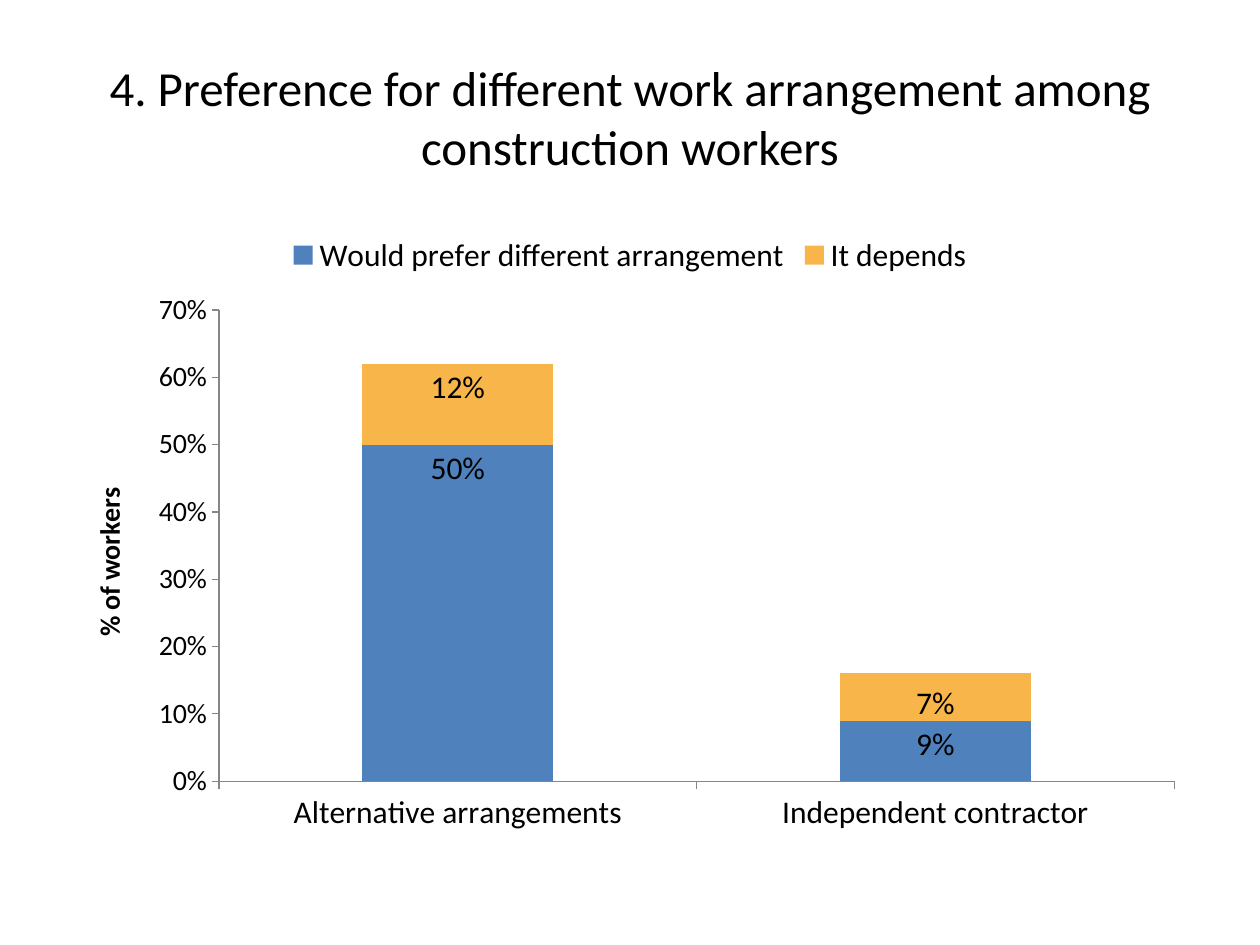
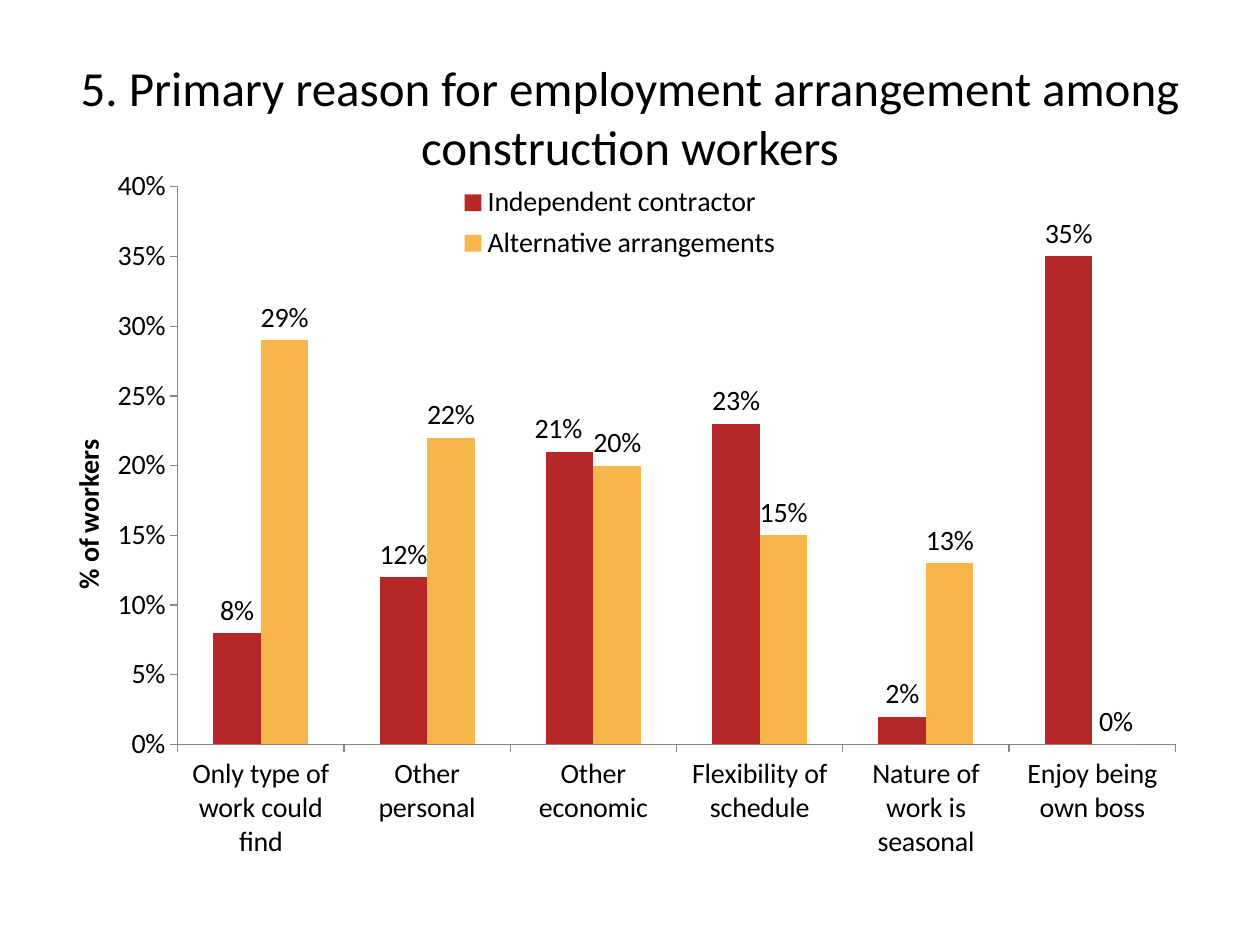
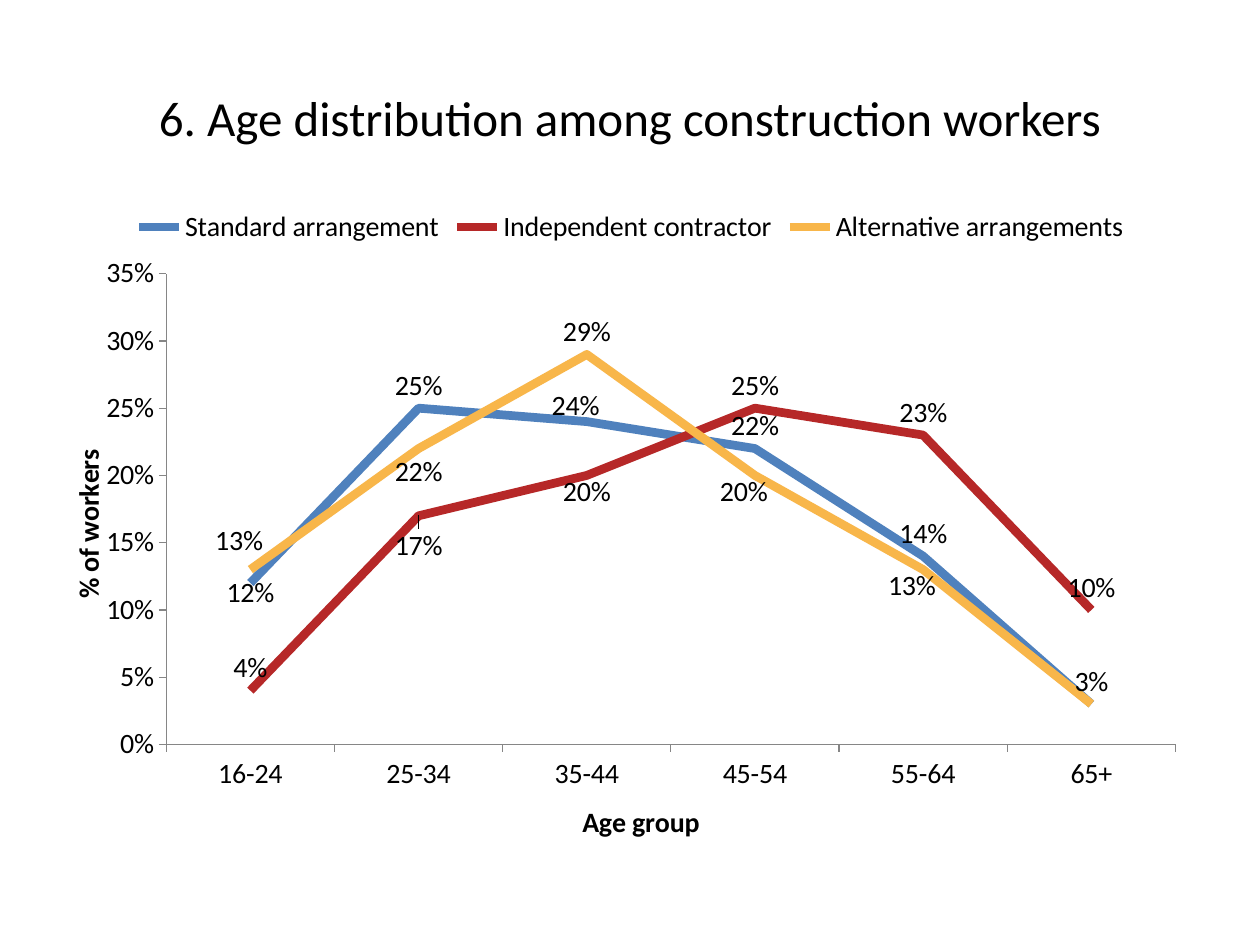
from dataclasses import dataclass
from lxml.etree import SubElement
from pptx import Presentation
from pptx.chart.data import CategoryChartData
from pptx.dml.color import RGBColor
from pptx.enum.chart import (XL_CHART_TYPE, XL_LABEL_POSITION, XL_LEGEND_POSITION,
                             XL_TICK_MARK)
from pptx.enum.text import MSO_ANCHOR, PP_ALIGN
from pptx.oxml.ns import qn
from pptx.util import Inches, Pt


@dataclass(frozen=True)
class Theme:
    font: str = "Calibri"
    text: str = "000000"
    axis: str = "868686"
    blue: str = "4F81BD"
    red: str = "B62828"
    amber: str = "F8B64A"
    title_size: int = 28
    chart_size: int = 16
    large_size: int = 18
    axis_line: float = 0.75
    trend_line: float = 5


T = Theme()
INDEPENDENT, ALTERNATIVE = "Independent contractor", "Alternative arrangements"
WORKERS = "% of workers"

# Content: series are (name, colour, values, {point: label shift, or None for no label})
SLIDES = [
    dict(title="4. Preference for different work arrangement among construction workers",
         kind=XL_CHART_TYPE.COLUMN_STACKED, box=(0.5, 1.75, 9, 4.95), size=T.large_size,
         fmt="0%", top=0.7, step=0.1, labels=XL_LABEL_POSITION.INSIDE_END, overlap=100,
         categories=[ALTERNATIVE, INDEPENDENT],
         series=[("Would prefer different arrangement", T.blue, [0.5, 0.09], {}),
                 ("It depends", T.amber, [0.12, 0.07], {1: (0, 0.01)})]),
    dict(title="5. Primary reason for employment arrangement among construction workers",
         kind=XL_CHART_TYPE.COLUMN_CLUSTERED, box=(0.51, 1.31, 9, 5.75), size=T.chart_size,
         fmt="0%", top=0.4, step=0.05, labels=XL_LABEL_POSITION.OUTSIDE_END, overlap=0,
         plot=(0.1, 0.03, 0.88, 0.77), legend=(0.34, 0.02, 0.3, 0.12),
         categories=["Only type of work could find", "Other personal", "Other economic",
                     "Flexibility of schedule", "Nature of work is seasonal",
                     "Enjoy being own boss"],
         series=[(INDEPENDENT, T.red, [0.08, 0.12, 0.21, 0.23, 0.02, 0.35],
                  {2: (-0.01, 0)}),
                 (ALTERNATIVE, T.amber, [0.29, 0.22, 0.2, 0.15, 0.13, 0], {})]),
    dict(title="6. Age distribution among construction workers",
         kind=XL_CHART_TYPE.LINE, box=(0.51, 1.55, 9, 5.19), size=T.chart_size,
         fmt='#,##0"%"', top=35, step=5, labels=XL_LABEL_POSITION.ABOVE,
         plot=(0.09, 0.12, 0.89, 0.72), category_title="Age group",
         categories=["16-24", "25-34", "35-44", "45-54", "55-64", "65+"],
         series=[("Standard arrangement", T.blue, [12, 25, 24, 22, 14, 3],
                  {0: (0, 0.05), 2: (-0.01, 0.01)}),
                 (INDEPENDENT, T.red, [4, 17, 20, 25, 23, 10],
                  {1: (0, 0.08), 2: (0, 0.06)}),
                 (ALTERNATIVE, T.amber, [13, 22, 29, 20, 13, 3],
                  {0: (-0.01, -0.01), 1: (0, 0.07), 3: (-0.01, 0.06),
                   4: (-0.01, 0.06), 5: None})]),
]


# Text
def style(font, size, bold=False):
    font.name, font.size, font.bold = T.font, Pt(size), bold
    font.color.rgb = RGBColor.from_string(T.text)


def add_text(s, text, box, size, align=PP_ALIGN.CENTER, anchor=MSO_ANCHOR.MIDDLE):
    tf = s.shapes.add_textbox(*map(Inches, box)).text_frame
    tf.word_wrap, tf.vertical_anchor = True, anchor
    p = tf.paragraphs[0]
    p.alignment = align
    r = p.add_run()
    r.text = text
    style(r.font, size)


# Chart parts
def set_layout(parent, index, values, inner=False, edge=True):
    """Place a chart part by fractions of the chart's width and height."""
    for old in parent.findall(qn("c:layout")):
        parent.remove(old)
    layout = SubElement(parent, qn("c:layout"))
    parent.insert(index, layout)
    manual = SubElement(layout, qn("c:manualLayout"))
    items = [("layoutTarget", "inner")] if inner else []
    items += [("xMode", "edge"), ("yMode", "edge")] if edge else []
    for tag, value in items + list(zip("xywh", values)):
        SubElement(manual, qn("c:" + tag)).set("val", str(value))


def format_axis(axis, size, title=None):
    axis.has_major_gridlines = False
    axis.major_tick_mark = XL_TICK_MARK.OUTSIDE
    axis.format.line.color.rgb = RGBColor.from_string(T.axis)
    axis.format.line.width = Pt(T.axis_line)
    style(axis.tick_labels.font, size)
    axis.has_title = bool(title)
    if title:
        p = axis.axis_title.text_frame.paragraphs[0]
        r = p.add_run()
        r.text = title
        style(r.font, T.chart_size, bold=True)


def format_labels(series, d, shifts):
    labels = series.data_labels
    labels.show_value, labels.position = True, d["labels"]
    labels.number_format, labels.number_format_is_linked = d["fmt"], False
    style(labels.font, d["size"])
    for i, shift in shifts.items():
        label = series.points[i].data_label
        label.position = d["labels"]
        style(label.font, d["size"])
        el = labels._element.xpath(f'c:dLbl[c:idx/@val="{i}"]')[0]
        if shift:
            set_layout(el, 1, shift, edge=False)
        else:
            for child in el[1:]:
                el.remove(child)
            SubElement(el, qn("c:delete")).set("val", "1")


def add_chart(s, d):
    data = CategoryChartData(number_format=d["fmt"])
    data.categories = d["categories"]
    for name, _, values, _ in d["series"]:
        data.add_series(name, values)
    chart = s.shapes.add_chart(d["kind"], *map(Inches, d["box"]), data).chart
    chart.has_title = False
    style(chart.font, d["size"])

    # Axes
    format_axis(chart.category_axis, d["size"], d.get("category_title"))
    axis = chart.value_axis
    format_axis(axis, T.chart_size, WORKERS)
    axis.minimum_scale, axis.maximum_scale, axis.major_unit = 0, d["top"], d["step"]
    axis.tick_labels.number_format = d["fmt"]
    axis.tick_labels.number_format_is_linked = False

    # Series
    plot = chart.plots[0]
    plot.vary_by_categories = False
    is_line = d["kind"] == XL_CHART_TYPE.LINE
    if not is_line:
        plot.gap_width, plot.overlap = 150, d["overlap"]
    for series, (_, color, _, shifts) in zip(plot.series, d["series"]):
        if is_line:
            series.smooth = False
            series.format.line.width = Pt(T.trend_line)
            series.format.line.color.rgb = RGBColor.from_string(color)
        else:
            series.format.fill.solid()
            series.format.fill.fore_color.rgb = RGBColor.from_string(color)
        format_labels(series, d, shifts)

    # Legend and plot area
    chart.has_legend = True
    legend = chart.legend
    floating = "legend" in d
    legend.position = XL_LEGEND_POSITION.RIGHT if floating else XL_LEGEND_POSITION.TOP
    legend.include_in_layout = floating
    style(legend.font, d["size"])
    if floating:
        set_layout(legend._element, 1, d["legend"])
    if "plot" in d:
        set_layout(plot._element.getparent(), 0, d["plot"], inner=True)


def main():
    prs = Presentation()
    prs.slide_width, prs.slide_height = Inches(10), Inches(7.5)
    for d in SLIDES:
        s = prs.slides.add_slide(prs.slide_layouts[6])
        add_text(s, d["title"], (0.5, 0.3, 9, 1.25), T.title_size)
        add_chart(s, d)
    prs.save("out.pptx")


if __name__ == "__main__":
    main()
